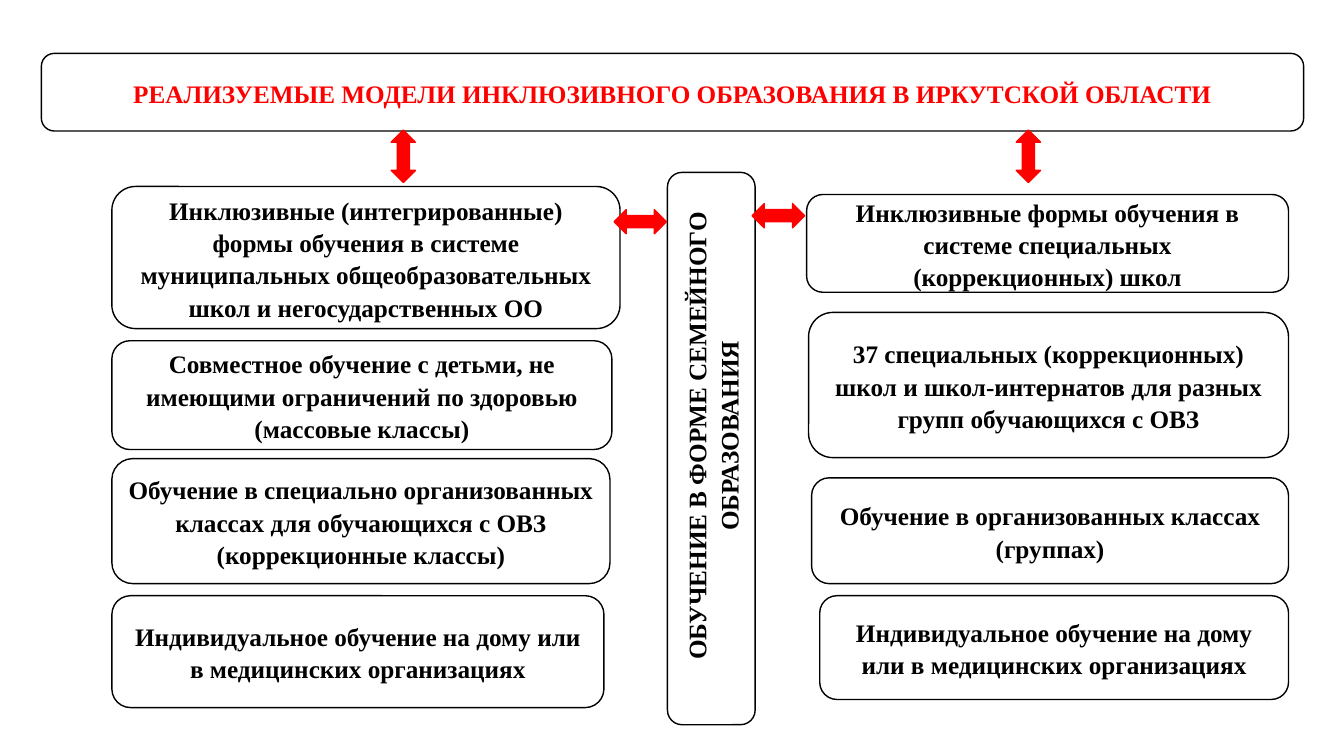
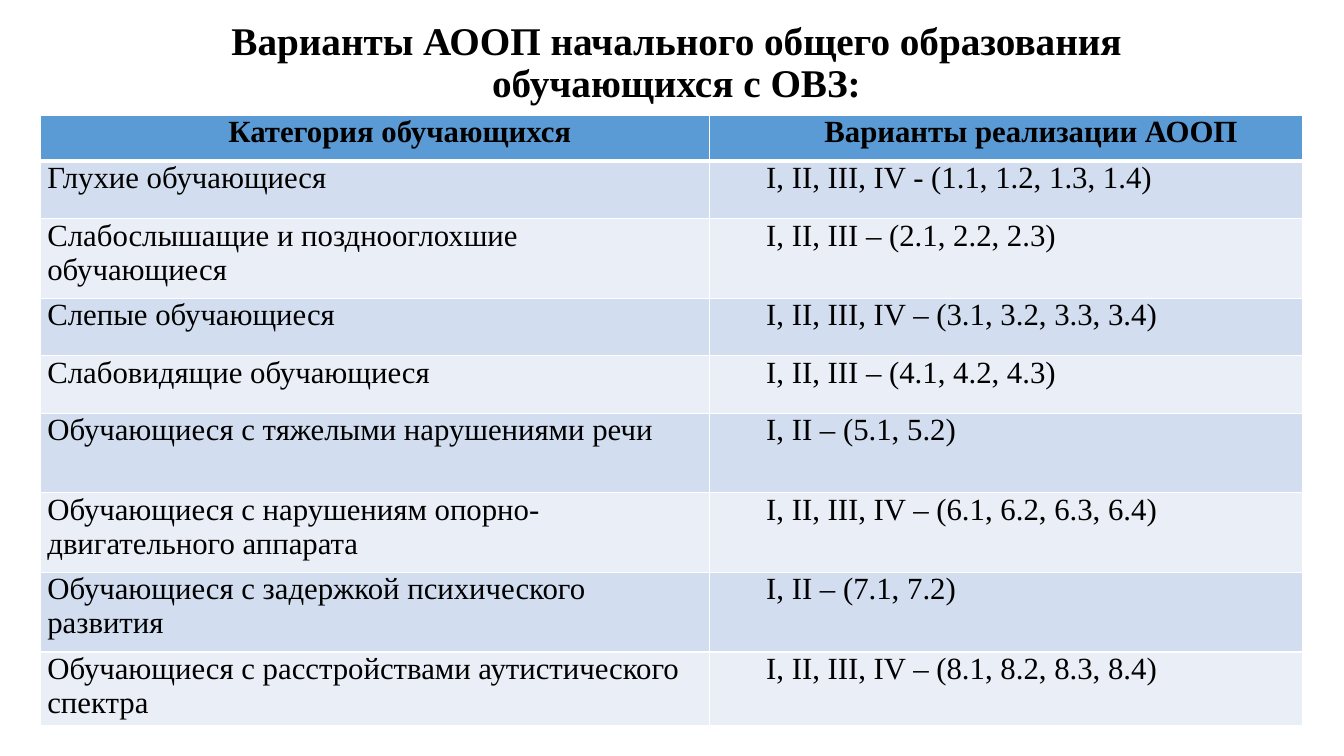
import pptx
import pptx.dml.color
import pptx.enum.shapes
import pptx.enum.text
import pptx.oxml
import pptx.oxml.ns
import pptx.util

Inches = pptx.util.Inches
Pt = pptx.util.Pt
SHAPES = pptx.enum.shapes.MSO_SHAPE
ALIGN = pptx.enum.text.PP_ALIGN
ANCHOR = pptx.enum.text.MSO_ANCHOR


class Deck:
    """Shared style, plus the slide being filled."""

    FONT = "Times New Roman"
    COLORS = {
        "ink": "000000",
        "paper": "FFFFFF",
        "accent": "FF0000",
        "header": "5B9BD5",
        "odd": "D2DEEF",
        "even": "EAEFF7",
    }

    def __init__(self, width, height):
        self.presentation = pptx.Presentation()
        self.presentation.slide_width = Inches(width)
        self.presentation.slide_height = Inches(height)
        self.slide = None

    def new_slide(self):
        blank = self.presentation.slide_layouts[6]
        self.slide = self.presentation.slides.add_slide(blank)

    def color(self, name):
        return pptx.dml.color.RGBColor.from_string(self.COLORS[name])

    def set_text(self, frame, text, size, color="ink", bold=True,
                 align=ALIGN.CENTER, spacing=1.0, after=0):
        frame.word_wrap = True
        frame.text = text
        for paragraph in frame.paragraphs:
            paragraph.alignment = align
            paragraph.line_spacing = spacing
            paragraph.space_after = Pt(after)
            for run in paragraph.runs:
                run.font.name = self.FONT
                run.font.size = Pt(size)
                run.font.bold = bold
                run.font.color.rgb = self.color(color)

    def shape(self, kind, place, fill, line):
        shape = self.slide.shapes.add_shape(kind, *map(Inches, place))
        shape.shadow.inherit = False
        shape.fill.solid()
        shape.fill.fore_color.rgb = self.color(fill)
        shape.line.color.rgb = self.color(line)
        shape.line.width = Pt(1)
        return shape

    def box(self, place, text, color="ink", after=8):
        box = self.shape(SHAPES.FLOWCHART_ALTERNATE_PROCESS, place, "paper", "ink")
        frame = box.text_frame
        frame.vertical_anchor = ANCHOR.MIDDLE
        self.set_text(frame, text, 18, color, spacing=1.07, after=after)
        return frame

    def upright_box(self, place, text, indent):
        frame = self.box(place, text)
        body = frame._txBody.find(pptx.oxml.ns.qn("a:bodyPr"))
        body.set("vert", "vert270")
        frame.paragraphs[0]._p.get_or_add_pPr().set("marL", str(Inches(indent)))

    def arrow(self, left, top, rotation=0):
        place = (left, top, 0.52, 0.24)
        arrow = self.shape(SHAPES.LEFT_RIGHT_ARROW, place, "accent", "accent")
        arrow.rotation = rotation

    def title(self, place, text):
        frame = self.slide.shapes.add_textbox(*map(Inches, place)).text_frame
        frame.vertical_anchor = ANCHOR.MIDDLE
        self.set_text(frame, text, 28, spacing=0.9)

    def borders(self, cell, bottom):
        properties = cell._tc.get_or_add_tcPr()
        sides = {"lnL": 1, "lnR": 1, "lnT": 1, "lnB": bottom}
        for position, (side, points) in enumerate(sides.items()):
            properties.insert(position, pptx.oxml.parse_xml(
                f'<a:{side} {pptx.oxml.ns.nsdecls("a")} w="{Pt(points)}">'
                f'<a:solidFill><a:srgbClr val="{self.COLORS["paper"]}"/>'
                f'</a:solidFill></a:{side}>'))

    def table(self, left, top, widths, heights, rows, indent):
        table = self.slide.shapes.add_table(
            len(rows), len(widths), Inches(left), Inches(top),
            Inches(sum(widths)), Inches(sum(heights))).table
        for column, width in zip(table.columns, widths):
            column.width = Inches(width)
        for r, (height, texts) in enumerate(zip(heights, rows)):
            table.rows[r].height = Inches(height)
            is_header = r == 0
            fill = "header" if is_header else ("even", "odd")[r % 2]
            for c, text in enumerate(texts):
                cell = table.cell(r, c)
                cell.margin_left = cell.margin_right = Inches(0.07)
                cell.margin_top = cell.margin_bottom = 0
                cell.fill.solid()
                cell.fill.fore_color.rgb = self.color(fill)
                self.borders(cell, 3 if is_header else 1)
                self.set_text(cell.text_frame, text, 22, bold=is_header,
                              align=ALIGN.CENTER if is_header else ALIGN.LEFT)
                if is_header or c == 1:
                    paragraph = cell.text_frame.paragraphs[0]
                    paragraph._p.get_or_add_pPr().set("indent", str(Inches(indent)))


def models_slide(deck):
    deck.new_slide()
    # Heading
    deck.box((0.41, 0.53, 12.52, 0.77),
             "РЕАЛИЗУЕМЫЕ МОДЕЛИ ИНКЛЮЗИВНОГО ОБРАЗОВАНИЯ В ИРКУТСКОЙ ОБЛАСТИ",
             "accent")

    # Mainstream schools: boxes share a left edge
    mainstream = [
        (1.85, 5.04, 1.41, 8, "Инклюзивные (интегрированные) формы обучения в системе "
         "муниципальных общеобразовательных школ и негосударственных ОО"),
        (3.38, 4.96, 1.08, 8, "Совместное обучение с детьми, не имеющими ограничений "
         "по здоровью (массовые классы)"),
        (4.55, 4.94, 1.24, 0, "Обучение в специально организованных классах для "
         "обучающихся с ОВЗ\n(коррекционные классы)"),
        (5.91, 4.88, 1.11, 8, "Индивидуальное обучение на дому или в медицинских "
         "организациях"),
    ]
    for top, width, height, after, text in mainstream:
        deck.box((1.11, top, width, height), text, after=after)

    # Special schools: boxes share a right edge
    right_edge = 12.78
    special = [
        (1.93, 4.78, 0.97, "Инклюзивные формы обучения в системе специальных "
         "(коррекционных) школ"),
        (3.1, 4.76, 1.44, "37 специальных (коррекционных) школ и школ-интернатов "
         "для разных групп обучающихся с ОВЗ"),
        (4.74, 4.73, 1.05, "Обучение в организованных классах (группах)"),
        (5.91, 4.65, 1.03, "Индивидуальное обучение на дому или в медицинских "
         "организациях"),
    ]
    for top, width, height, text in special:
        deck.box((right_edge - width, top, width, height), text)

    # Family education
    deck.upright_box((6.62, 1.71, 0.87, 5.48),
                     "ОБУЧЕНИЕ В ФОРМЕ СЕМЕЙНОГО ОБРАЗОВАНИЯ", 0.25)

    # Links between the models
    deck.arrow(6.09, 2.08)
    deck.arrow(7.46, 2.02)
    for left in (3.74, 9.94):
        deck.arrow(left, 1.43, 90)


def programmes_slide(deck):
    deck.new_slide()
    deck.title((2.18, 0.13, 9.06, 1.01),
               "Варианты АООП начального общего образования обучающихся с ОВЗ:")

    # Programme variants by learner category
    rows = [
        ("Категория обучающихся", "Варианты реализации АООП"),
        ("Глухие обучающиеся", "I, II, III, IV - (1.1, 1.2, 1.3, 1.4)"),
        ("Слабослышащие и позднооглохшие обучающиеся",
         "I, II, III – (2.1, 2.2, 2.3)"),
        ("Слепые обучающиеся", "I, II, III, IV – (3.1, 3.2, 3.3, 3.4)"),
        ("Слабовидящие обучающиеся", "I, II, III – (4.1, 4.2, 4.3)"),
        ("Обучающиеся с тяжелыми нарушениями речи", "I, II – (5.1, 5.2)"),
        ("Обучающиеся с нарушениям опорно-двигательного аппарата",
         "I, II, III, IV – (6.1, 6.2, 6.3, 6.4)"),
        ("Обучающиеся с задержкой психического развития", "I, II – (7.1, 7.2)"),
        ("Обучающиеся с расстройствами аутистического спектра",
         "I, II, III, IV – (8.1, 8.2, 8.3, 8.4)"),
    ]
    single, double = 0.57, 0.79
    heights = [0.46, single, double, single, single, double, double, double, 0.67]
    deck.table(0.4, 1.14, (6.64, 5.88), heights, rows, indent=0.49)


def main():
    deck = Deck(13.33, 7.5)
    models_slide(deck)
    programmes_slide(deck)
    deck.presentation.save("out.pptx")


if __name__ == "__main__":
    main()
